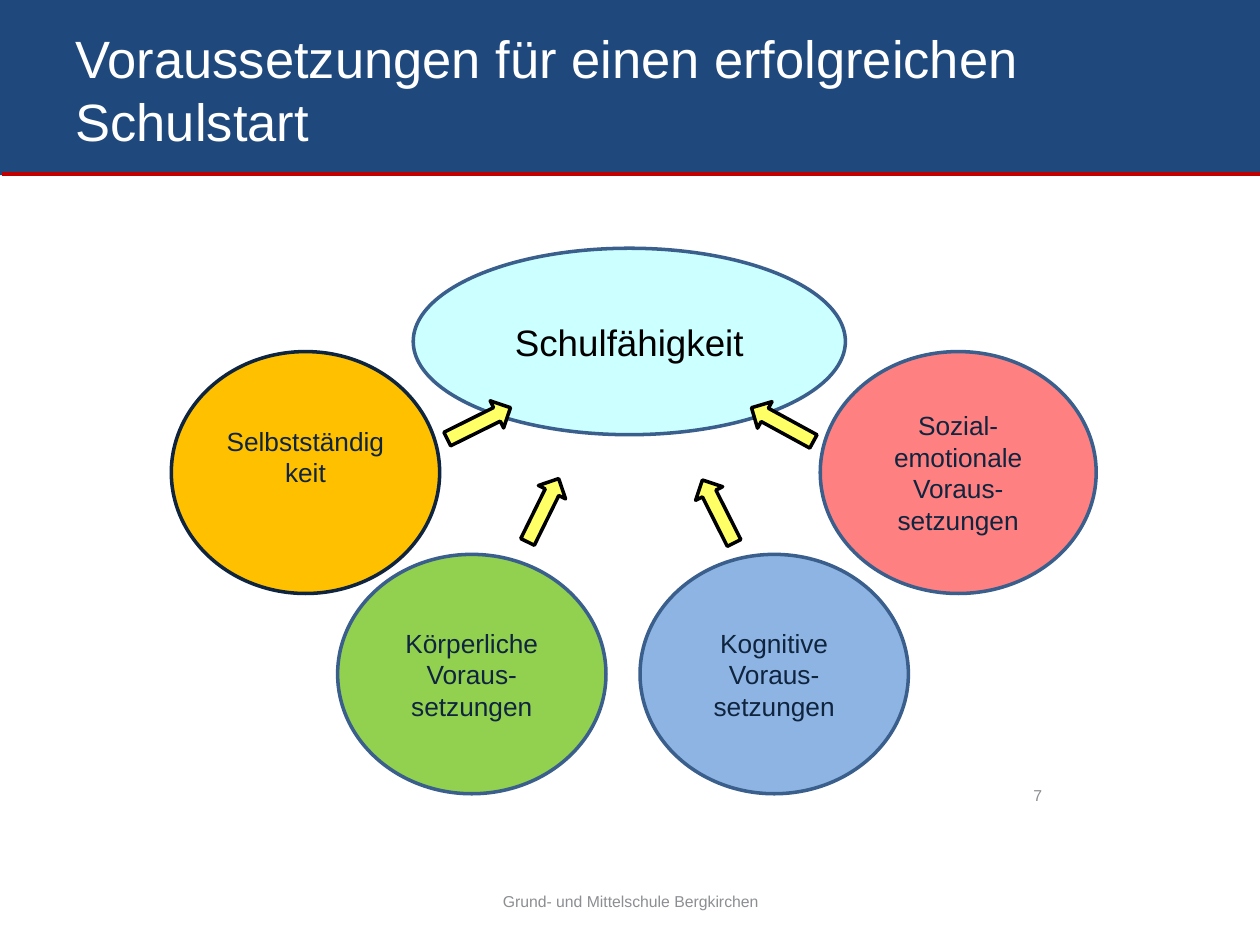
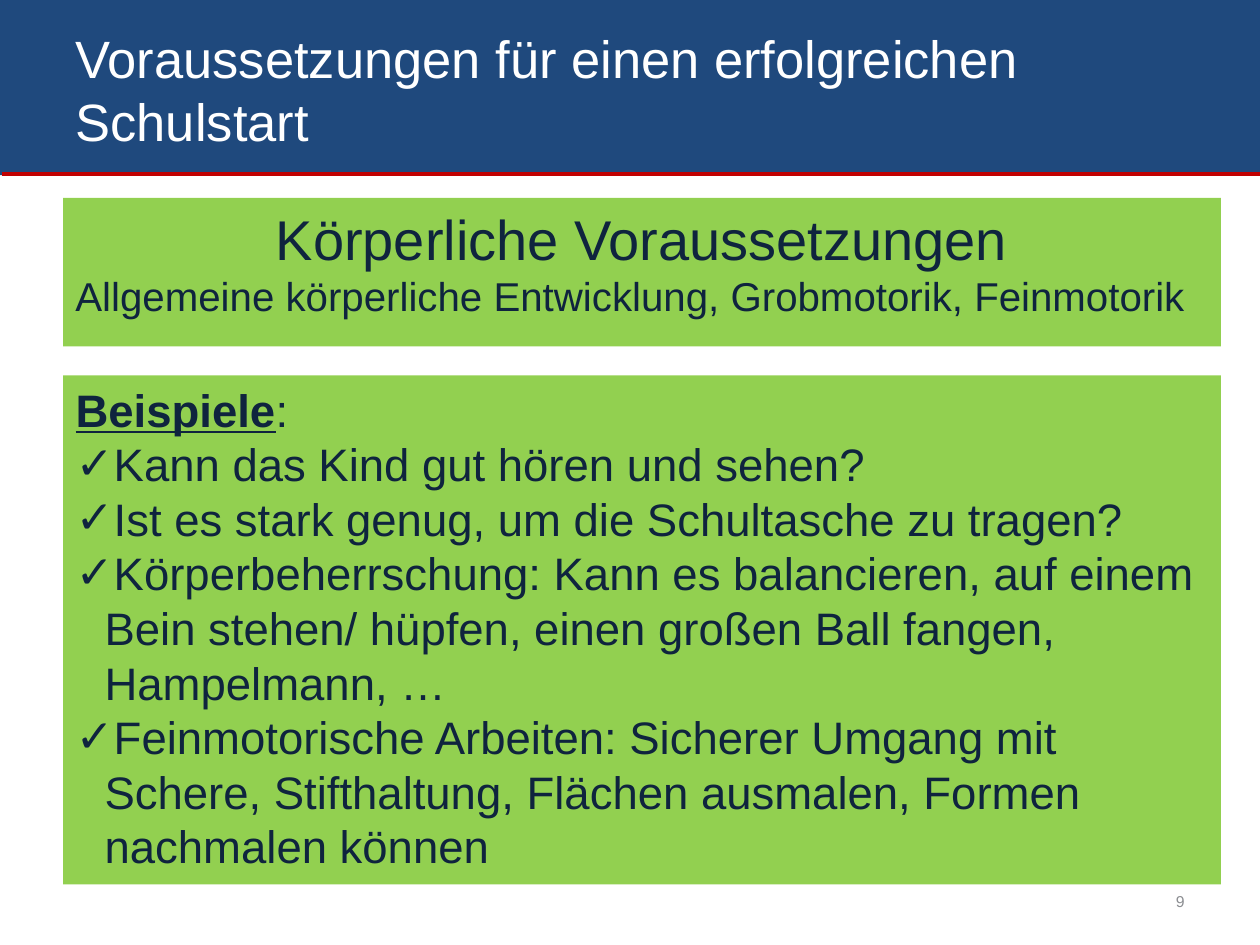
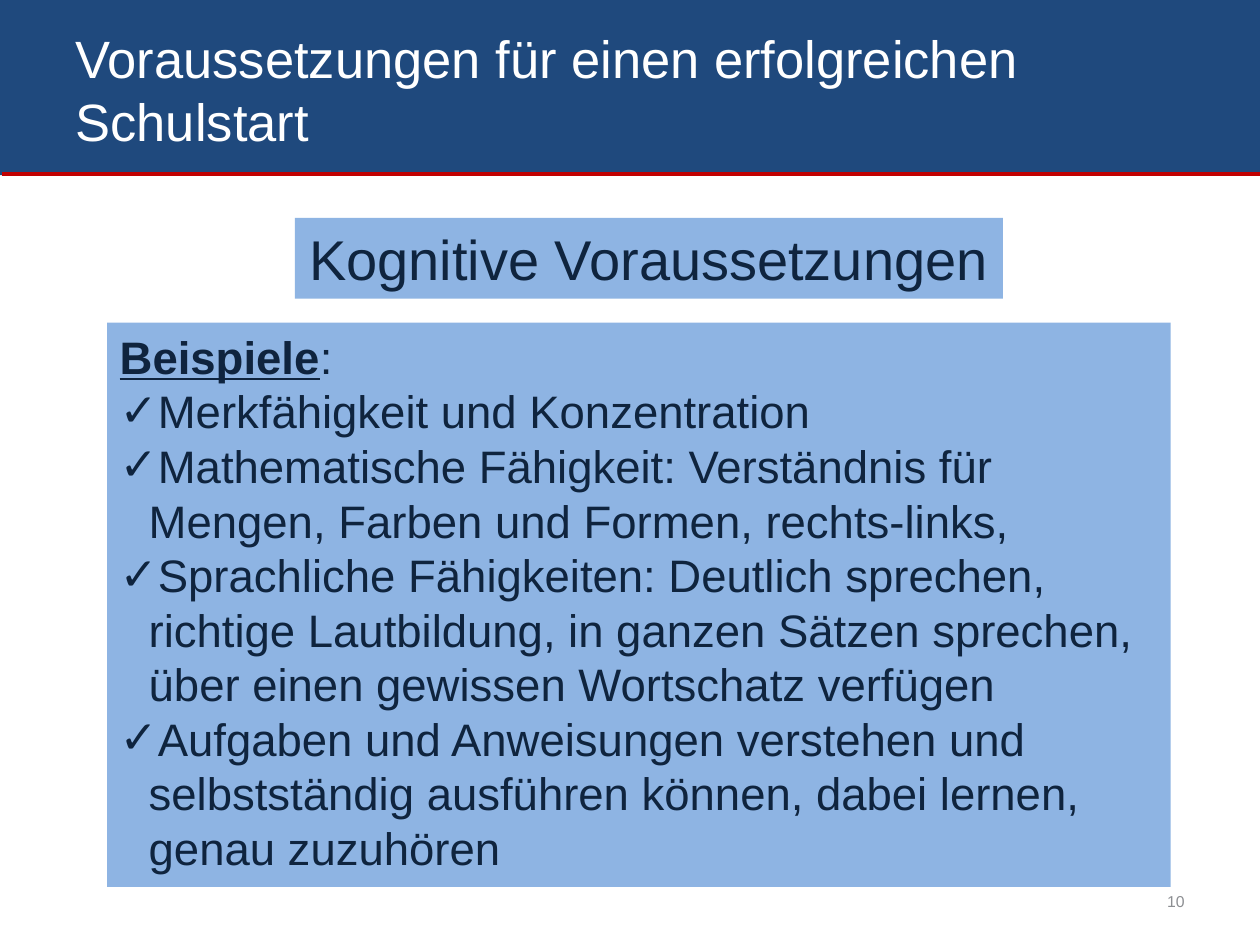
from lxml import etree
from pptx import Presentation
from pptx.dml.color import RGBColor
from pptx.enum.shapes import MSO_CONNECTOR, MSO_SHAPE as Form
from pptx.enum.text import MSO_ANCHOR as Anchor, MSO_AUTO_SIZE as AutoSize, PP_ALIGN as Align
from pptx.oxml.ns import qn
from pptx.util import Inches, Pt

FONT = "Arial"
NAVY, INK, GREY, WHITE, BLACK = "1F497D", "0F243E", "8C8E92", "FFFFFF", "000000"
RED, OUTLINE = "C00000", "3A5F8C"
GREEN, BLUE, ORANGE, SALMON = "92D050", "8EB4E3", "FFC000", "FF8080"
CYAN, YELLOW = "CCFFFF", "FFFF66"
TITLE = "Voraussetzungen für einen erfolgreichen Schulstart"
SCHOOL = "Grund- und Mittelschule Bergkirchen"
TITLE_ONLY, TITLE_AND_BODY = 5, 1


def color(value):
    return RGBColor.from_string(value)


class SlideBuilder:
    def __init__(self):
        self.deck = Presentation()
        self.deck.slide_width = Inches(10)
        self.deck.slide_height = Inches(7.5)
        self.page = None

    def add_page(self, layout):
        first = self.page is None
        self.page = self.deck.slides.add_slide(self.deck.slide_layouts[layout])
        if first:
            self.add_master_band()
        title = self.page.shapes.title
        self.place(title, (0.5, 0.16, 8.02, 1.09))
        self.prepare(title, Anchor.MIDDLE)
        self.add_text(title.text_frame.paragraphs[0], TITLE, 30, WHITE)

    def add_master_band(self):
        band = self.shape(Form.RECTANGLE, (0, -0.02, 10.02, 1.41), NAVY)
        rule = self.page.shapes.add_connector(
            MSO_CONNECTOR.STRAIGHT, Inches(0.02), Inches(1.38), Inches(10.02), Inches(1.38))
        rule.line.color.rgb = color(RED)
        rule.line.width = Pt(2.25)
        etree.SubElement(rule._element.spPr, qn("a:effectLst"))
        tree = self.deck.slide_master.shapes._spTree
        for offset, item in enumerate((band, rule)):
            item._element.xpath(".//p:cNvPr")[0].set("id", str(100 + offset))
            tree.insert(2 + offset, item._element)

    def place(self, item, area):
        item.left, item.top, item.width, item.height = map(Inches, area)

    def prepare(self, box, anchor):
        frame = box.text_frame
        frame.word_wrap = True
        frame.auto_size = AutoSize.NONE
        frame.vertical_anchor = anchor

    def add_text(self, para, text, size, ink, align=Align.LEFT, strong=False):
        para.alignment = align
        para.space_before = Pt(0)
        span = para.add_run()
        span.text = text
        font = span.font
        font.name, font.size = FONT, Pt(size)
        font.color.rgb = color(ink)
        font.bold = font.underline = strong

    def shape(self, form, area, fill, line=None, rotation=0):
        item = self.page.shapes.add_shape(form, *map(Inches, area))
        item.shadow.inherit = False
        item.rotation = rotation
        item.fill.solid()
        item.fill.fore_color.rgb = color(fill)
        if line:
            item.line.color.rgb = color(line)
            item.line.width = Pt(2)
        else:
            item.line.fill.background()
        return item

    def ellipse(self, area, text, fill, line=OUTLINE, size=15, ink=INK, bottom=0.05):
        box = self.shape(Form.OVAL, area, fill, line)
        self.prepare(box, Anchor.MIDDLE)
        box.text_frame.margin_bottom = Inches(bottom)
        self.add_text(box.text_frame.paragraphs[0], text, size, ink, Align.CENTER)

    def heading(self, area, fill, text, subtitle=None):
        box = self.shape(Form.RECTANGLE, area, fill)
        self.prepare(box, Anchor.TOP)
        frame = box.text_frame
        self.add_text(frame.paragraphs[0], text, 32, INK, Align.CENTER)
        if subtitle:
            self.add_text(frame.add_paragraph(), subtitle, 23, INK)

    def bullet(self, para, mark=None):
        props = para._p.get_or_add_pPr()
        indent = Inches(0.23) if mark else 0
        props.set("marL", str(indent))
        props.set("indent", str(-indent))
        if mark:
            etree.SubElement(props, qn("a:buFont")).set("typeface", FONT)
            etree.SubElement(props, qn("a:buChar")).set("char", mark)
        else:
            etree.SubElement(props, qn("a:buNone"))

    def examples(self, area, fill, items):
        box = self.page.placeholders[1]
        self.place(box, area)
        box.fill.solid()
        box.fill.fore_color.rgb = color(fill)
        self.prepare(box, Anchor.TOP)
        para = box.text_frame.paragraphs[0]
        self.bullet(para)
        self.add_text(para, "Beispiele", 26, INK, strong=True)
        self.add_text(para, ":", 26, INK)
        for item in items:
            para = box.text_frame.add_paragraph()
            self.bullet(para, "✓")
            self.add_text(para, item, 26, INK)

    def small_text(self, area, text, align=Align.RIGHT):
        box = self.page.shapes.add_textbox(*map(Inches, area))
        self.prepare(box, Anchor.MIDDLE)
        self.add_text(box.text_frame.paragraphs[0], text, 9, GREY, align)

    def page_number(self, number, area=(7.17, 6.95, 2.33, 0.4)):
        self.small_text(area, str(number))


def overview(builder):
    builder.add_page(TITLE_ONLY)
    builder.small_text((3.42, 6.95, 3.17, 0.4), SCHOOL, Align.CENTER)
    builder.page_number(7, (6.62, 6.16, 1.75, 0.3))
    builder.ellipse((3.28, 1.97, 3.43, 1.48), "Schulfähigkeit", CYAN, size=21, ink=BLACK)
    builder.ellipse((1.36, 2.79, 2.13, 1.92), "Selbstständigkeit", ORANGE, INK, bottom=0.3)
    builder.ellipse((2.68, 4.4, 2.13, 1.9), "Körperliche Voraus-setzungen", GREEN)
    builder.ellipse((5.08, 4.4, 2.13, 1.9), "Kognitive Voraus-setzungen", BLUE)
    builder.ellipse((6.51, 2.79, 2.19, 1.92), "Sozial-emotionale Voraus-setzungen", SALMON)
    arrows = ((3.52, 3.24, 153.6), (4.03, 3.93, 116.2), (5.42, 3.94, 63.3), (5.93, 3.25, 28.6))
    for left, top, angle in arrows:
        builder.shape(Form.LEFT_ARROW, (left, top, 0.56, 0.24), YELLOW, BLACK, angle)


def physical(builder):
    builder.add_page(TITLE_AND_BODY)
    builder.page_number(9)
    builder.heading((0.5, 1.57, 9.19, 1.18), GREEN, "Körperliche Voraussetzungen",
                    "Allgemeine körperliche Entwicklung, Grobmotorik, Feinmotorik")
    builder.examples((0.5, 2.98, 9.19, 4.04), GREEN, (
        "Kann das Kind gut hören und sehen?",
        "Ist es stark genug, um die Schultasche zu tragen?",
        "Körperbeherrschung: Kann es balancieren, auf einem Bein stehen/ hüpfen, "
        "einen großen Ball fangen, Hampelmann, …",
        "Feinmotorische Arbeiten: Sicherer Umgang mit Schere, Stifthaltung, "
        "Flächen ausmalen, Formen nachmalen können",
    ))


def cognitive(builder):
    builder.add_page(TITLE_AND_BODY)
    builder.page_number(10)
    builder.heading((2.34, 1.73, 5.62, 0.64), BLUE, "Kognitive Voraussetzungen")
    builder.examples((0.85, 2.56, 8.44, 4.48), BLUE, (
        "Merkfähigkeit und Konzentration",
        "Mathematische Fähigkeit: Verständnis für Mengen, Farben und Formen, rechts-links,",
        "Sprachliche Fähigkeiten: Deutlich sprechen, richtige Lautbildung, "
        "in ganzen Sätzen sprechen, über einen gewissen Wortschatz verfügen",
        "Aufgaben und Anweisungen verstehen und selbstständig ausführen können, "
        "dabei lernen, genau zuzuhören",
    ))


def main():
    builder = SlideBuilder()
    for build in (overview, physical, cognitive):
        build(builder)
    builder.deck.save("out.pptx")


if __name__ == "__main__":
    main()
